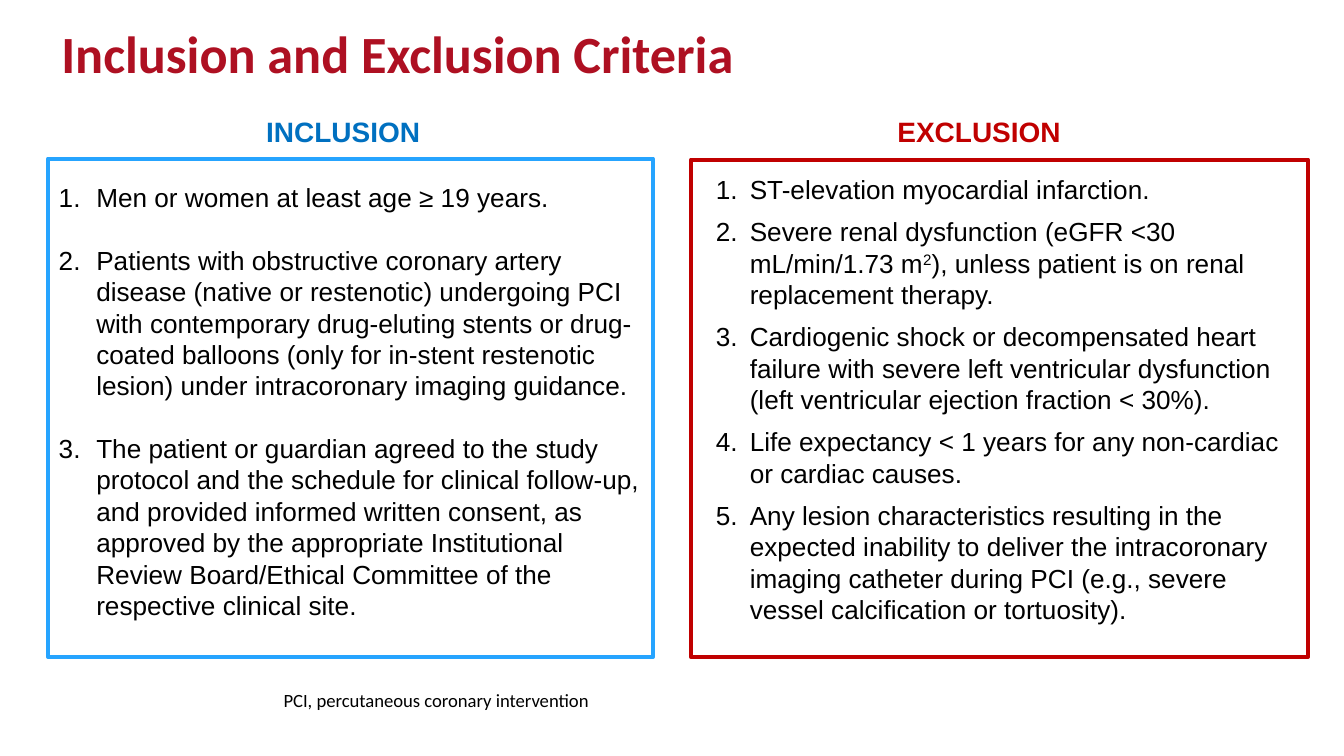
import dataclasses

import lxml.etree
import pptx
import pptx.dml.color
import pptx.enum.shapes
import pptx.enum.text
import pptx.oxml.ns
import pptx.util
from pptx.util import Cm, Pt

ANCHOR = pptx.enum.text.MSO_ANCHOR
ALIGN = pptx.enum.text.PP_ALIGN
BLACK = "000000"


@dataclasses.dataclass
class Area:
    left: float
    top: float
    width: float
    height: float

    def lengths(self) -> tuple:
        return tuple(Cm(value) for value in dataclasses.astuple(self))


@dataclasses.dataclass
class Criteria:
    heading: str
    heading_color: str
    frame_color: str
    heading_area: Area
    frame_area: Area
    list_area: Area
    indent: float
    hanging: float
    gap: float
    items: list[str]  # "^" surrounds superscript


def color(value: str) -> pptx.dml.color.RGBColor:
    return pptx.dml.color.RGBColor.from_string(value)


def place(box, area: Area, anchor=ANCHOR.TOP):
    """Position a text box or placeholder and return its text frame."""
    box.left, box.top, box.width, box.height = area.lengths()
    frame = box.text_frame
    frame.word_wrap = True
    frame.auto_size = pptx.enum.text.MSO_AUTO_SIZE.NONE
    frame.vertical_anchor = anchor
    frame.margin_left = frame.margin_right = Cm(0.25)
    frame.margin_top = frame.margin_bottom = Cm(0.13)
    return frame


def style(para, name: str, size: float, value: str, bold=False, align=ALIGN.LEFT) -> None:
    para.alignment = align
    para.font.name = name
    para.font.size = Pt(size)
    para.font.bold = bold
    para.font.color.rgb = color(value)


def add_number(para, indent: float, hanging: float) -> None:
    properties = para._p.get_or_add_pPr()
    properties.set("marL", str(Cm(indent)))
    properties.set("indent", str(-Cm(hanging)))
    number = lxml.etree.SubElement(properties, pptx.oxml.ns.qn("a:buAutoNum"))
    number.set("type", "arabicPeriod")


def draw_criteria(page, criteria: Criteria, heading_box, list_box) -> None:
    # Heading
    para = place(heading_box, criteria.heading_area).paragraphs[0]
    para.text = criteria.heading
    para.space_before = Pt(0)
    style(para, "Arial", 15, criteria.heading_color, True, ALIGN.CENTER)

    # Frame
    outline = page.shapes.add_shape(
        pptx.enum.shapes.MSO_SHAPE.RECTANGLE, *criteria.frame_area.lengths())
    outline.shadow.inherit = False
    outline.fill.background()
    outline.line.color.rgb = color(criteria.frame_color)
    outline.line.width = Pt(2.25)

    # Numbered list
    frame = place(list_box, criteria.list_area)
    for index, item in enumerate(criteria.items):
        para = frame.add_paragraph() if index else frame.paragraphs[0]
        add_number(para, criteria.indent, criteria.hanging)
        para.line_spacing = Pt(16.8)
        para.space_before = Pt(criteria.gap if index else 0)
        style(para, "Arial", 14, BLACK)
        for position, text in enumerate(item.split("^")):
            span = para.add_run()
            span.text = text
            if position % 2:
                span._r.get_or_add_rPr().set("baseline", "30000")


INCLUSION = Criteria(
    "INCLUSION", "0070C0", "26A4FF",
    Area(3.07, 2.03, 6.83, 0.89), Area(0.91, 3, 11.43, 9.42),
    Area(0.86, 3.3, 11.48, 8.64), 0.71, 0.71, 16.8,
    [
        "Men or women at least age ≥ 19 years.",
        "Patients with obstructive coronary artery disease (native or restenotic) "
        "undergoing PCI with contemporary drug-eluting stents or drug-coated balloons "
        "(only for in-stent restenotic lesion) under intracoronary imaging guidance.",
        "The patient or guardian agreed to the study protocol and the schedule for "
        "clinical follow-up, and provided informed written consent, as approved by the "
        "appropriate Institutional Review Board/Ethical Committee of the respective "
        "clinical site.",
    ])
EXCLUSION = Criteria(
    "EXCLUSION", "C00000", "C00000",
    Area(15.09, 2.03, 6.83, 0.89), Area(13.06, 3.02, 11.66, 9.4),
    Area(13.11, 3.15, 11.61, 8.89), 0.81, 0.64, 5.8,
    [
        "ST-elevation myocardial infarction.",
        "Severe renal dysfunction (eGFR <30 mL/min/1.73 m^2^), unless patient is on "
        "renal replacement therapy.",
        "Cardiogenic shock or decompensated heart failure with severe left ventricular "
        "dysfunction (left ventricular ejection fraction < 30%).",
        "Life expectancy < 1 years for any non-cardiac or cardiac causes.",
        "Any lesion characteristics resulting in the expected inability to deliver the "
        "intracoronary imaging catheter during PCI (e.g., severe vessel calcification "
        "or tortuosity).",
    ])


def main() -> None:
    deck = pptx.Presentation()
    deck.slide_width, deck.slide_height = Cm(25.4), Cm(14.29)
    page = deck.slides.add_slide(deck.slide_layouts.get_by_name("Comparison"))
    title, *boxes = page.placeholders

    # Title
    para = place(title, Area(0.91, 0.53, 21.21, 1.19), ANCHOR.BOTTOM).paragraphs[0]
    para.text = "Inclusion and Exclusion Criteria"
    para.line_spacing = Pt(25)
    style(para, "Calibri", 28, "AE1022", True)

    # Criteria side by side
    draw_criteria(page, INCLUSION, *boxes[:2])
    draw_criteria(page, EXCLUSION, *boxes[2:])

    # Footnote
    area = Area(5.11, 12.88, 19, 0.69)
    note = page.shapes.add_textbox(*area.lengths())
    para = place(note, area, ANCHOR.MIDDLE).paragraphs[0]
    para.text = "PCI, percutaneous coronary intervention"
    style(para, "Calibri", 10, BLACK)

    deck.save("out.pptx")


if __name__ == "__main__":
    main()
